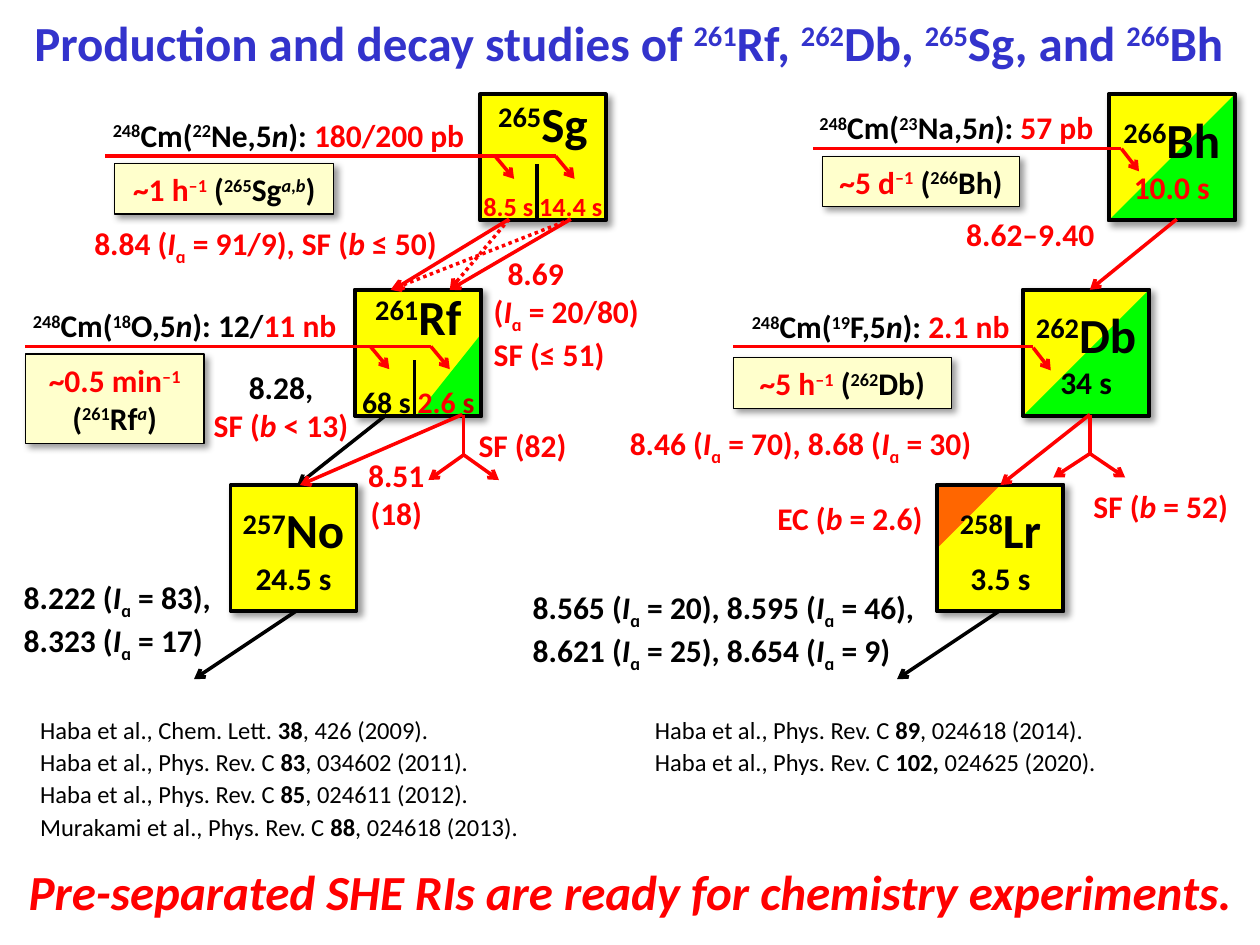
from itertools import groupby

from lxml import etree
from pptx import Presentation
from pptx import util as u
from pptx.dml.color import RGBColor
from pptx.enum import dml, shapes, text
from pptx.oxml.ns import qn

PX = 9144  # 100 px to the inch
BLACK, RED, YELLOW, GREEN = "000000", "FF0000", "FFFF00", "00FF00"
ALIGN = text.PP_ALIGN
color = RGBColor.from_string


def write(shape, lines, colors=(BLACK,), sizes=(18,), align=ALIGN.CENTER,
          bold=True, spacing=None, wrap=True, gap=0):
    """Marks: ^raised^, _lowered_, *italic*, !weight switched!, | next colour.

    The last size serves all further lines; gap is the space before the last line.
    """
    frame = shape.text_frame
    frame.word_wrap = wrap
    frame.auto_size = text.MSO_AUTO_SIZE.NONE
    inks = iter(colors)
    ink = next(inks)
    for number, line in enumerate(lines):
        para = frame.add_paragraph() if number else frame.paragraphs[0]
        para.alignment = align
        if spacing:
            para.line_spacing = spacing
        if gap and number == len(lines) - 1:
            para.space_before = u.Pt(gap)
        active = set()
        for mark, chars in groupby(line, lambda c: c if c in "^_*!|" else ""):
            if mark == "|":
                ink = next(inks)
            elif mark:
                active ^= {mark}
            else:
                span = para.add_run()
                span.text = "".join(chars)
                span.font.name = "Calibri"
                span.font.size = u.Pt(sizes[min(number, len(sizes) - 1)])
                span.font.bold = bold != ("!" in active)
                span.font.italic = "*" in active
                span.font.color.rgb = color(ink)
                if "^" in active or "_" in active:
                    baseline = "30000" if "^" in active else "-25000"
                    span._r.get_or_add_rPr().set("baseline", baseline)


def add_box(kind, x, y, w, h, fill=None, line=0, shadow=False):
    box = page.shapes.add_shape(kind, x * PX, y * PX, w * PX, h * PX)
    box.shadow.inherit = False
    if fill:
        box.fill.solid()
        box.fill.fore_color.rgb = color(fill)
    else:
        box.fill.background()
    if line:
        box.line.color.rgb = color(BLACK)
        box.line.width = u.Pt(line)
    else:
        box.line.fill.background()
    if shadow:
        effects = box._element.spPr.find(qn("a:effectLst"))
        outer = etree.SubElement(effects, qn("a:outerShdw"), blurRad="50800",
                                 dist="38100", dir="2700000", algn="tl", rotWithShape="0")
        ink = etree.SubElement(outer, qn("a:srgbClr"), val=BLACK)
        etree.SubElement(ink, qn("a:alpha"), val="40000")
    return box


deck = Presentation()
deck.slide_width, deck.slide_height = 1000 * PX, 750 * PX
page = deck.slides.add_slide(deck.slide_layouts[5])

title = page.shapes.title
title.left, title.top, title.width, title.height = 4 * PX, 5 * PX, 990 * PX, 49 * PX
frame = title.text_frame
frame.margin_left = frame.margin_right = frame.margin_top = frame.margin_bottom = 0
frame.vertical_anchor = text.MSO_ANCHOR.TOP
write(title, ["Production and decay studies of ^261^Rf, ^262^Db, ^265^Sg, and ^266^Bh"],
      colors=["3333CC"], sizes=[28], spacing=1.1)

# Nuclides: left, top, lines, colours, sizes, gap,
# corner (left, top, width, height, flip, fill)
SIDE = 100
nuclides = [
    (381, 75, ["^265^Sg", "|8.5 s 14.4 s"], [BLACK, RED], [28, 15], 22, None),
    (282, 230, ["^261^Rf", "68 s |2.6| s"], [BLACK, RED, "C00000"], [28, 17], 22,
     (331, 265, 51, 64, "flipH", GREEN)),
    (183, 385, ["^257^No", "24.5 s"], [BLACK], [28, 18], 0, None),
    (880, 75, ["^266^Bh", "|10.0 s"], [BLACK, RED], [28, 18], 0,
     (880, 75, SIDE, SIDE, "flipH", GREEN)),
    (812, 230, ["^262^Db", "34 s"], [BLACK], [28, 18], 0,
     (812, 230, SIDE, SIDE, "flipH", GREEN)),
    (744, 385, ["^258^Lr", "3.5 s"], [BLACK], [28, 18], 0,
     (744, 385, 50, 50, "flipV", "FF6600")),
]
SHAPE = shapes.MSO_SHAPE
for x, y, lines, colors, sizes, gap, corner in nuclides:
    square = add_box(SHAPE.RECTANGLE, x, y, SIDE, SIDE, YELLOW, 2.25, shadow=True)
    if corner:
        *area, flip, fill = corner
        triangle = add_box(SHAPE.RIGHT_TRIANGLE, *area, fill)
        triangle._element.spPr.xfrm.set(flip, "1")
        square = add_box(SHAPE.RECTANGLE, x, y, SIDE, SIDE, None, 2.25)
    write(square, lines, colors, sizes, wrap=False, gap=gap)

# Production rates
rates = [
    (91, 130, 174, 40, "~1 h^–1^ |(^265^Sg^*a*,*b*^)"),
    (20, 281, 142, 71, "~0.5 min^–1^ |(^261^Rf^*a*^)"),
    (653, 124, 156, 40, "~5 d^–1^ |(^266^Bh)"),
    (582, 284, 173, 40, "~5 h^–1^ |(^262^Db)"),
]
for x, y, w, h, label in rates:
    box = add_box(SHAPE.RECTANGLE, x, y, w, h, "FFFFCC", 0.75, shadow=True)
    write(box, [label], [RED, BLACK])

# Text boxes: left, top, width, height, lines, format
reaction = dict(colors=[BLACK, RED], spacing=1.2)
red = dict(colors=[RED], align=ALIGN.LEFT)
black = dict(align=ALIGN.LEFT)
reference = dict(sizes=[14], align=ALIGN.LEFT, bold=False, spacing=1.1)
labels = [
    (53, 81, 352, 44, ["^248^Cm(^22^Ne,5*n*): |180/200 pb"], reaction),
    (-3, 232, 299, 44, ["^248^Cm(^18^O,5*n*): 12/|11 nb"], reaction),
    (613, 75, 292, 44, ["^248^Cm(^23^Na,5*n*): |57 pb"], reaction),
    (566, 233, 266, 44, ["^248^Cm(^19^F,5*n*): |2.1 nb"], reaction),
    (65, 173, 337, 40, ["8.84 (*I*_ɑ_ = 91/9), SF (*b* ≤ 50)"], red),
    (393, 197, 154, 40, ["8.69"], red),
    (382, 227, 165, 71, ["(*I*_ɑ_ = 20/80)", "SF (≤ 51)"], red),
    (282, 357, 65, 71, ["8.51", "(18)"], dict(colors=[RED], wrap=False)),
    (159, 287, 128, 71, ["8.28,", "|SF (*b* < 13)"], dict(colors=[BLACK, RED])),
    (370, 333, 90, 40, ["SF (82)"], red),
    (9, 454, 193, 71, ["8.222 (*I*_ɑ_ = 83), 8.323 (*I*_ɑ_ = 17)"], black),
    (757, 166, 179, 40, ["8.62–9.40"], red),
    (490, 332, 343, 40, ["8.46 (*I*_ɑ_ = 70), 8.68 (*I*_ɑ_ = 30)"], red),
    (605, 391, 139, 40, ["EC (*b* = 2.6)"], dict(colors=[RED])),
    (858, 382, 127, 40, ["SF (*b* = 52)"], dict(red, wrap=False)),
    (413, 462, 357, 71, ["8.565 (*I*_ɑ_ = 20), 8.595 (*I*_ɑ_ = 46),",
                         "8.621 (*I*_ɑ_ = 25), 8.654 (*I*_ɑ_ = 9)"], black),
    (22, 560, 448, 114, ["Haba et al., Chem. Lett. !38!, 426 (2009).",
                         "Haba et al., Phys. Rev. C !83!, 034602 (2011).",
                         "Haba et al., Phys. Rev. C !85!, 024611 (2012).",
                         "Murakami et al., Phys. Rev. C !88!, 024618 (2013)."], reference),
    (510, 560, 410, 61, ["Haba et al., Phys. Rev. C !89!, 024618 (2014).",
                         "Haba et al., Phys. Rev. C !102, !024625 (2020)."], reference),
    (4, 674, 992, 59, ["*Pre-separated SHE RIs are ready for chemistry experiments.*"],
     dict(colors=[RED], sizes=[28], spacing=1.1)),
]
for x, y, w, h, lines, style in labels:
    box = page.shapes.add_textbox(x * PX, y * PX, w * PX, h * PX)
    write(box, lines, **style)

# Lines: colour, width, arrowhead, dotted, then (from x, from y, to x, to y)
line_groups = [
    (BLACK, 2.25, False, False, [(426, 130, 426, 174), (329, 286, 329, 330)]),
    (BLACK, 2, True, False, [(235, 485, 154, 539), (307, 329, 236, 385),
                             (793, 485, 712, 539)]),
    (RED, 2, True, True, [(453, 174, 310, 230), (404, 174, 357, 230)]),
    (RED, 2, True, False, [
        (453, 174, 357, 230), (404, 174, 312, 230), (367, 329, 238, 385),
        (368, 361, 340, 381), (368, 361, 396, 381),
        (441, 124, 456, 142), (393, 124, 408, 142),
        (342, 275, 357, 293), (294, 275, 309, 293),
        (934, 174, 865, 230), (865, 329, 794, 385),
        (865, 360, 836, 379), (865, 360, 893, 379),
        (890, 118, 904, 136), (820, 276, 834, 294)]),
    (RED, 2, False, False, [
        (441, 124, 83, 124), (342, 275, 20, 275), (890, 118, 645, 118),
        (820, 275, 582, 275), (368, 329, 368, 361), (865, 329, 865, 361)]),
]
for ink, width, arrow, dotted, routes in line_groups:
    for route in routes:
        line = page.shapes.add_connector(shapes.MSO_CONNECTOR.STRAIGHT,
                                         *(length * PX for length in route))
        line.line.color.rgb = color(ink)
        line.line.width = u.Pt(width)
        if dotted:
            line.line.dash_style = dml.MSO_LINE.ROUND_DOT
        if arrow:
            etree.SubElement(line.line._get_or_add_ln(), qn("a:tailEnd"), type="arrow")
        etree.SubElement(line._element.spPr, qn("a:effectLst"))

deck.save("out.pptx")
